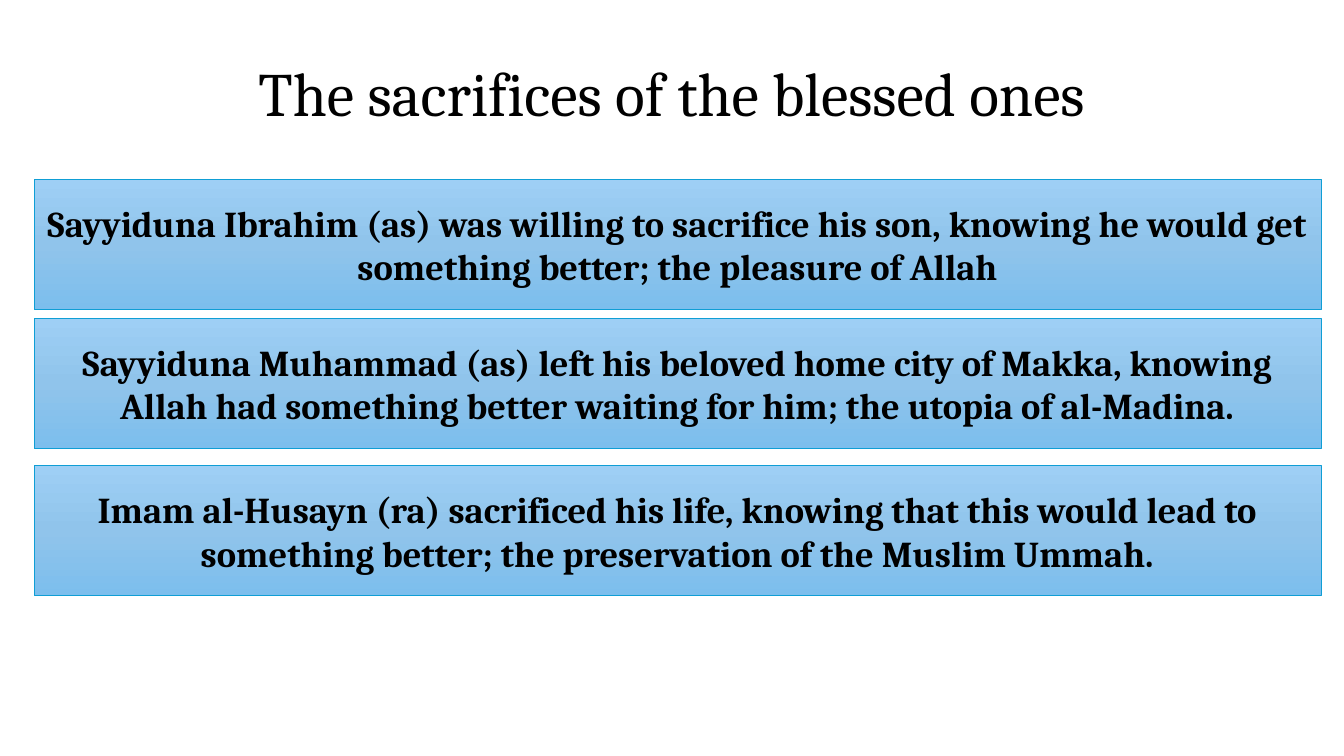
"""Build a slide about the sacrifices of the blessed ones."""
from copy import deepcopy

from pptx import Presentation
from pptx.dml.color import RGBColor
from pptx.enum.shapes import MSO_SHAPE
from pptx.enum.text import MSO_ANCHOR, PP_ALIGN
from pptx.oxml.ns import qn
from pptx.util import Pt

TITLE = "The sacrifices of the blessed ones"
SACRIFICES = [
    (128.2, "Sayyiduna Ibrahim (as) was willing to sacrifice his son, knowing he "
            "would get something better; the pleasure of Allah"),
    (227.5, "Sayyiduna Muhammad (as) left his beloved home city of Makka, knowing "
            "Allah had something better waiting for him; the utopia of al-Madina."),
    (332.6, "Imam al-Husayn (ra) sacrificed his life, knowing that this would lead to "
            "something better; the preservation of the Muslim Ummah."),
]
FONT = "Cambria"
BLACK = RGBColor(0x00, 0x00, 0x00)
BORDER = RGBColor(0x0F, 0x9E, 0xD5)
GRADIENT = [
    (0, RGBColor(0x9E, 0xCF, 0xF5)),
    (0.5, RGBColor(0x90, 0xC4, 0xEB)),
    (1, RGBColor(0x7C, 0xBE, 0xED)),
]
BAR_LEFT, BAR_WIDTH, BAR_HEIGHT = 24.5, 919.4, 92.9


def write(sp, text, size, bold=False):
    tf = sp.text_frame
    tf.word_wrap = True
    tf.vertical_anchor = MSO_ANCHOR.MIDDLE
    p = tf.paragraphs[0]
    p.text = text
    p.alignment = PP_ALIGN.CENTER
    p.font.name = FONT
    p.font.size = Pt(size)
    p.font.bold = bold
    p.font.color.rgb = BLACK
    return p


def fill_gradient(sp):
    sp.fill.gradient()
    sp.fill.gradient_angle = 270
    stops = sp._element.spPr.find(qn("a:gradFill")).find(qn("a:gsLst"))
    stops.insert(1, deepcopy(stops[0]))
    for stop, (position, color) in zip(sp.fill.gradient_stops, GRADIENT):
        stop.position = position
        stop.color.rgb = color


def add_bar(s, top, text):
    sp = s.shapes.add_shape(MSO_SHAPE.RECTANGLE, Pt(BAR_LEFT), Pt(top),
                            Pt(BAR_WIDTH), Pt(BAR_HEIGHT))
    sp.shadow.inherit = False
    fill_gradient(sp)
    sp.line.color.rgb = BORDER
    sp.line.width = Pt(1)
    write(sp, text, 26, bold=True)


def main():
    prs = Presentation()
    prs.slide_width, prs.slide_height = Pt(960), Pt(540)
    s = prs.slides.add_slide(prs.slide_layouts[6])
    title = s.shapes.add_textbox(Pt(66), Pt(16.6), Pt(828), Pt(104.4))
    write(title, TITLE, 44).line_spacing = 0.9
    for top, text in SACRIFICES:
        add_bar(s, top, text)
    prs.save("out.pptx")


if __name__ == "__main__":
    main()
